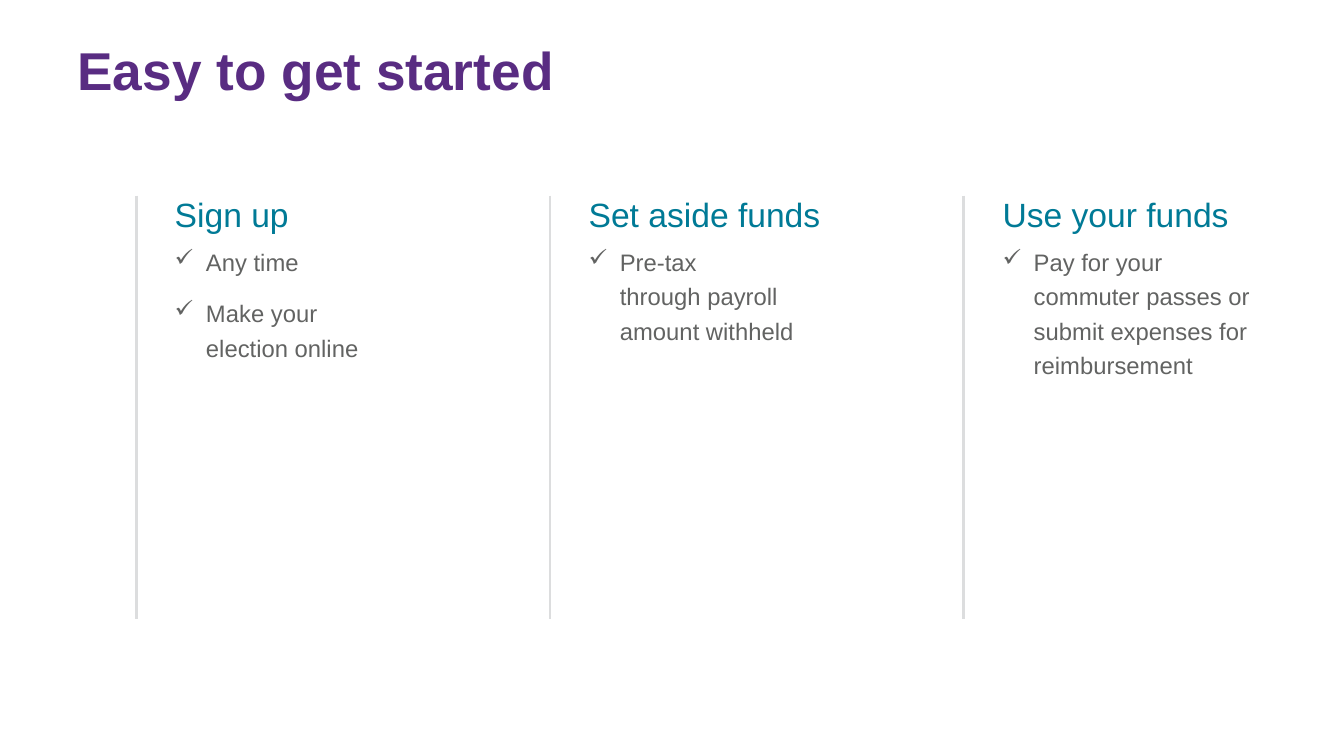
from lxml.etree import SubElement
from pptx import Presentation
from pptx.dml.color import RGBColor
from pptx.enum.shapes import MSO_CONNECTOR
from pptx.enum.text import MSO_ANCHOR
from pptx.oxml.ns import qn
from pptx.util import Inches, Pt

COLORS = {"title": "592C82", "heading": "007A96", "body": "626362", "rule": "DCDDDE"}

# Column grid, in inches
FIRST_RULE, COLUMN_STEP = 1.35, 4.105
RULE_TOP, RULE_BOTTOM = 1.94, 6.14
TEXT_OFFSET, TEXT_TOP = 0.285, 1.83
BULLET_INDENT = 0.31

# Heading, box width, box height, bullets
COLUMNS = [
    ("Sign up", 2.26, 1.92, ["Any time", "Make your election online"]),
    ("Set aside funds", 2.83, 1.92, ["Pre-tax\vthrough payroll amount withheld"]),
    ("Use your funds", 2.84, 2.08,
     ["Pay for your commuter passes or submit expenses for reimbursement"]),
]


def add_text_frame(slide, left, top, width, height):
    text_box = slide.shapes.add_textbox(
        Inches(left), Inches(top), Inches(width), Inches(height))
    text_box.text_frame.word_wrap = True
    return text_box.text_frame


def write(paragraph, text, size, color, bold=False):
    paragraph.text = text
    for run in paragraph.runs:
        run.font.name = "Arial"
        run.font.size = Pt(size)
        run.font.bold = bold
        run.font.color.rgb = RGBColor.from_string(COLORS[color])


presentation = Presentation()
presentation.slide_width = Inches(13.33)
presentation.slide_height = Inches(7.5)
slide = presentation.slides.add_slide(presentation.slide_layouts[6])

# Title
title_frame = add_text_frame(slide, 0.67, 0.27, 12, 0.84)
title_frame.vertical_anchor = MSO_ANCHOR.MIDDLE
write(title_frame.paragraphs[0], "Easy to get started", 38, "title", bold=True)

for index, (heading, width, height, bullets) in enumerate(COLUMNS):
    # Vertical rule
    rule_left = FIRST_RULE + index * COLUMN_STEP
    rule = slide.shapes.add_connector(
        MSO_CONNECTOR.STRAIGHT, Inches(rule_left), Inches(RULE_TOP),
        Inches(rule_left), Inches(RULE_BOTTOM))
    rule.line.width = Pt(2)
    rule.line.color.rgb = RGBColor.from_string(COLORS["rule"])
    SubElement(rule._element.spPr, qn("a:effectLst"))

    # Heading
    text_frame = add_text_frame(slide, rule_left + TEXT_OFFSET, TEXT_TOP, width, height)
    heading_paragraph = text_frame.paragraphs[0]
    write(heading_paragraph, heading, 24, "heading")
    heading_paragraph.line_spacing = 1.1
    heading_paragraph.space_after = Pt(6)

    # Check-marked points
    for bullet in bullets:
        paragraph = text_frame.add_paragraph()
        write(paragraph, bullet, 17, "body")
        paragraph.line_spacing = 1.2
        paragraph.space_after = Pt(12)
        properties = paragraph._p.get_or_add_pPr()
        properties.set("marL", str(Inches(BULLET_INDENT)))
        properties.set("indent", str(-Inches(BULLET_INDENT)))
        SubElement(properties, qn("a:buChar")).set("char", "✓")

presentation.save("out.pptx")
